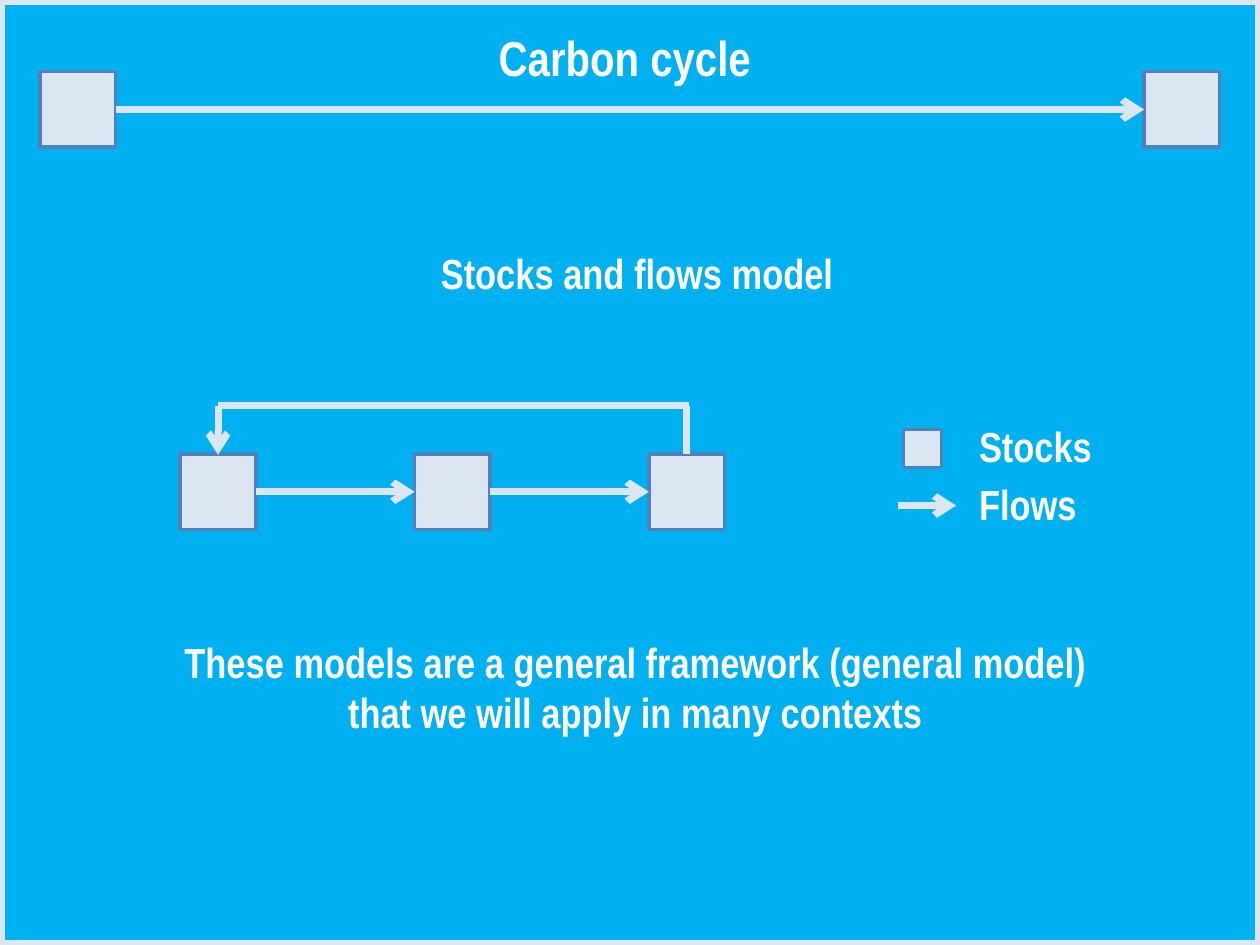
import dataclasses

import pptx
import pptx.dml.color
import pptx.enum.shapes
import pptx.enum.text
import pptx.oxml
import pptx.oxml.ns
import pptx.util

Pt = pptx.util.Pt
Align = pptx.enum.text.PP_ALIGN
RECTANGLE = pptx.enum.shapes.MSO_SHAPE.RECTANGLE
STRAIGHT = pptx.enum.shapes.MSO_CONNECTOR.STRAIGHT


def color(code):
    return pptx.dml.color.RGBColor.from_string(code)


@dataclasses.dataclass(frozen=True)
class Theme:
    background: str = "00B0F0"
    pale: str = "DCE6F2"
    outline: str = "4F81BD"
    text: str = "FFFFFF"
    font: str = "Arial Narrow"
    title_size: float = 28
    text_size: float = 24
    border_width: float = 6
    flow_width: float = 4
    stock_width: float = 2


THEME = Theme()
PAGE_WIDTH, PAGE_HEIGHT = 720, 540
STOCK_SIZE = 43.2


def apply_format(target, values):
    for name, value in values.items():
        setattr(target, name, value)


def place(shape, box):
    names = ("left", "top", "width", "height")
    apply_format(shape, dict(zip(names, map(Pt, box))))


def write_text(shape, text, size, alignment):
    frame = shape.text_frame
    frame.text = text
    apply_format(frame, {
        "word_wrap": True,
        "auto_size": pptx.enum.text.MSO_AUTO_SIZE.SHAPE_TO_FIT_TEXT,
        "vertical_anchor": pptx.enum.text.MSO_ANCHOR.TOP,
    })
    para = frame.paragraphs[0]
    para.alignment = alignment
    font = para.runs[0].font
    apply_format(font, {"name": THEME.font, "size": Pt(size), "bold": True})
    font.color.rgb = color(THEME.text)


def add_label(page, box, text, alignment=Align.CENTER):
    label = page.shapes.add_textbox(*map(Pt, box))
    write_text(label, text, THEME.text_size, alignment)


def add_rectangle(page, box, line_color, line_width, fill=None):
    shape = page.shapes.add_shape(RECTANGLE, *map(Pt, box))
    shape.shadow.inherit = False
    if fill:
        shape.fill.solid()
        shape.fill.fore_color.rgb = color(fill)
    else:
        shape.fill.background()
    shape.line.color.rgb = color(line_color)
    shape.line.width = Pt(line_width)


def add_stock(page, left, top, size=STOCK_SIZE):
    add_rectangle(page, (left, top, size, size),
                  THEME.outline, THEME.stock_width, THEME.pale)


def add_flow(page, start, end, arrow=True):
    flow = page.shapes.add_connector(STRAIGHT, *map(Pt, start + end))
    flow.line.color.rgb = color(THEME.pale)
    flow.line.width = Pt(THEME.flow_width)
    if arrow:
        head = pptx.oxml.parse_xml(
            f'<a:tailEnd {pptx.oxml.ns.nsdecls("a")} type="arrow"/>')
        flow.line._get_or_add_ln().append(head)
    flow._element.spPr.append(pptx.oxml.parse_xml(
        f'<a:effectLst {pptx.oxml.ns.nsdecls("a")}/>'))


def add_stock_chain(page, box, count):
    """Spread stocks evenly along the box and join neighbours with flows."""
    left, top, width, _ = box
    step = (width - STOCK_SIZE) / (count - 1)
    middle = top + STOCK_SIZE / 2
    for index in range(count):
        add_stock(page, left + index * step, top)
    for index in range(count - 1):
        start = left + index * step + STOCK_SIZE
        add_flow(page, (start, middle), (start + step - STOCK_SIZE, middle))


def add_header(page, box):
    left, top, width, _ = box
    add_stock_chain(page, (left, top + 29, width, STOCK_SIZE), 2)
    title = page.shapes.title
    place(title, (left + 31, top, 606, 41))
    write_text(title, "Carbon cycle", THEME.title_size, Align.CENTER)


def add_feedback_model(page, box):
    """Draw a chain of three stocks with a return flow above it."""
    left, top, width, height = box
    stock_top = top + height - STOCK_SIZE
    add_stock_chain(page, (left, stock_top, width, STOCK_SIZE), 3)
    first = left + STOCK_SIZE / 2
    last = left + width - STOCK_SIZE / 2
    add_flow(page, (first, top), (last + 1.5, top), arrow=False)
    add_flow(page, (last, stock_top), (last, top), arrow=False)
    add_flow(page, (first, top), (first, stock_top + 0.5))


def add_legend(page, box):
    left, top, width, height = box
    row_height = height / 2
    add_flow(page, (left, top + 52), (left + 33, top + 52))
    add_stock(page, left + 3, top + 8.6, 21.6)
    for row, text in enumerate(("Stocks", "Flows")):
        add_label(page, (left + 39, top + row * row_height, width - 39, 36),
                  text, Align.LEFT)


def build_deck():
    deck = pptx.Presentation()
    deck.slide_width, deck.slide_height = Pt(PAGE_WIDTH), Pt(PAGE_HEIGHT)
    page = deck.slides.add_slide(deck.slide_layouts[5])
    page.background.fill.solid()
    page.background.fill.fore_color.rgb = color(THEME.background)

    add_rectangle(page, (0, 0, PAGE_WIDTH, PAGE_HEIGHT),
                  THEME.pale, THEME.border_width)
    add_header(page, (23, 12, 674, 73))
    add_label(page, (56, 138, 616, 36), "Stocks and flows model")
    add_feedback_model(page, (103, 231.8, 311, 70.8))
    add_legend(page, (513.4, 236.9, 120, 66.2))
    add_label(page, (90, 360, 546, 65.5),
              "These models are a general framework (general model) "
              "that we will apply in many contexts")
    deck.save("out.pptx")


if __name__ == "__main__":
    build_deck()
